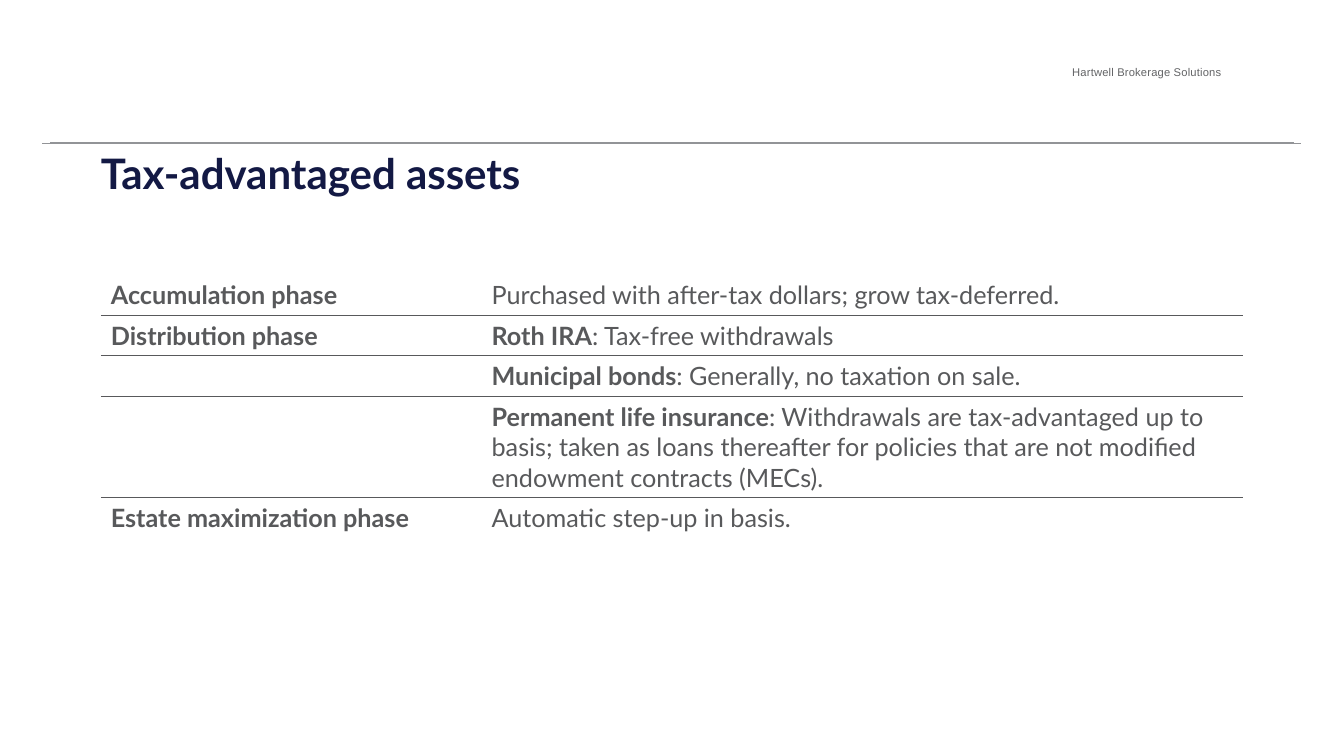
from lxml.etree import SubElement
from pptx import Presentation
from pptx.dml.color import RGBColor
from pptx.enum.shapes import MSO_CONNECTOR
from pptx.enum.text import MSO_ANCHOR, MSO_AUTO_SIZE, PP_ALIGN
from pptx.oxml.ns import qn
from pptx.util import Pt

NAVY, TEXT_GRAY, HEADER_GRAY, RULE_GRAY = "131944", "58595B", "636466", "929497"
ROW_HEIGHTS = [29, 29, 29, 72, 29]
COLUMN_WIDTHS = [272, 544]

# Each cell is a list of (text, bold) spans
PHASES = [
    ([("Accumulation phase", True)],
     [("Purchased with after-tax dollars; grow tax-deferred.", False)]),
    ([("Distribution phase", True)],
     [("Roth IRA", True), (": Tax-free withdrawals", False)]),
    ([], [("Municipal bonds", True), (": Generally, no taxation on sale.", False)]),
    ([], [("Permanent life insurance", True),
          (": Withdrawals are tax-advantaged up to basis; taken as loans thereafter "
           "for policies that are not modified endowment contracts (MECs).", False)]),
    ([("Estate maximization phase", True)],
     [("Automatic step-up in basis.", False)]),
]


def color(value):
    return RGBColor.from_string(value)


def add_span(para, text, size=18, font="Lato", fill=TEXT_GRAY, bold=False):
    span = para.add_run()
    span.text = text
    span.font.size = Pt(size)
    span.font.name = font
    span.font.bold = bold
    span.font.color.rgb = color(fill)
    return span


def prepare_frame(frame):
    frame.margin_left = frame.margin_right = 0
    frame.margin_top = frame.margin_bottom = 0
    frame.auto_size = MSO_AUTO_SIZE.NONE
    frame.vertical_anchor = MSO_ANCHOR.TOP
    frame.word_wrap = True
    return frame.paragraphs[0]


def add_header(slide, text):
    box = slide.shapes.add_textbox(Pt(765.9), Pt(46.8), Pt(166), Pt(11))
    span = add_span(prepare_frame(box.text_frame), text,
                    size=8, font="Arial", fill=HEADER_GRAY)
    span.font._element.set("spc", "10")


def add_rule(slide, left, right, top):
    rule = slide.shapes.add_connector(
        MSO_CONNECTOR.STRAIGHT, Pt(left), Pt(top), Pt(right), Pt(top))
    rule.line.color.rgb = color(RULE_GRAY)
    rule.line.width = Pt(0.5)
    SubElement(rule._element.spPr, qn("a:effectLst"))


def set_title(slide, text):
    title = slide.shapes.title
    title.left, title.top, title.width, title.height = Pt(72), Pt(110.2), Pt(816), Pt(75.6)
    para = prepare_frame(title.text_frame)
    para.alignment = PP_ALIGN.LEFT
    para.line_spacing = Pt(31)
    add_span(para, text, size=30, fill=NAVY, bold=True)


def set_borders(cell, visible):
    properties = cell._tc.get_or_add_tcPr()
    for side in ("lnL", "lnR", "lnT", "lnB"):
        border = SubElement(properties, qn(f"a:{side}"), w=str(Pt(1)))
        if side in visible:
            fill = SubElement(border, qn("a:solidFill"))
            SubElement(fill, qn("a:srgbClr"), val=TEXT_GRAY)
        else:
            SubElement(border, qn("a:noFill"))


def add_phase_table(slide):
    table = slide.shapes.add_table(
        len(PHASES), len(COLUMN_WIDTHS), Pt(72), Pt(196.2),
        Pt(sum(COLUMN_WIDTHS)), Pt(sum(ROW_HEIGHTS))).table
    table.first_row = table.horz_banding = False
    for column, width in zip(table.columns, COLUMN_WIDTHS):
        column.width = Pt(width)
    for index, (row, height, contents) in enumerate(zip(table.rows, ROW_HEIGHTS, PHASES)):
        row.height = Pt(height)
        # Lines run only between rows
        visible = [side for side, edge in (("lnT", 0), ("lnB", len(PHASES) - 1))
                   if index != edge]
        for cell, spans in zip(row.cells, contents):
            set_borders(cell, visible)
            cell.fill.background()
            for text, bold in spans:
                add_span(cell.text_frame.paragraphs[0], text, bold=bold)


def main():
    deck = Presentation()
    deck.slide_width, deck.slide_height = Pt(960), Pt(540)
    slide = deck.slides.add_slide(deck.slide_layouts[5])

    # Page header
    add_header(slide, "Hartwell Brokerage Solutions")
    add_rule(slide, 30.2, 929.5, 102.5)
    add_rule(slide, 36, 924.5, 102)

    # Content
    set_title(slide, "Tax-advantaged assets")
    add_phase_table(slide)
    deck.save("out.pptx")


if __name__ == "__main__":
    main()
